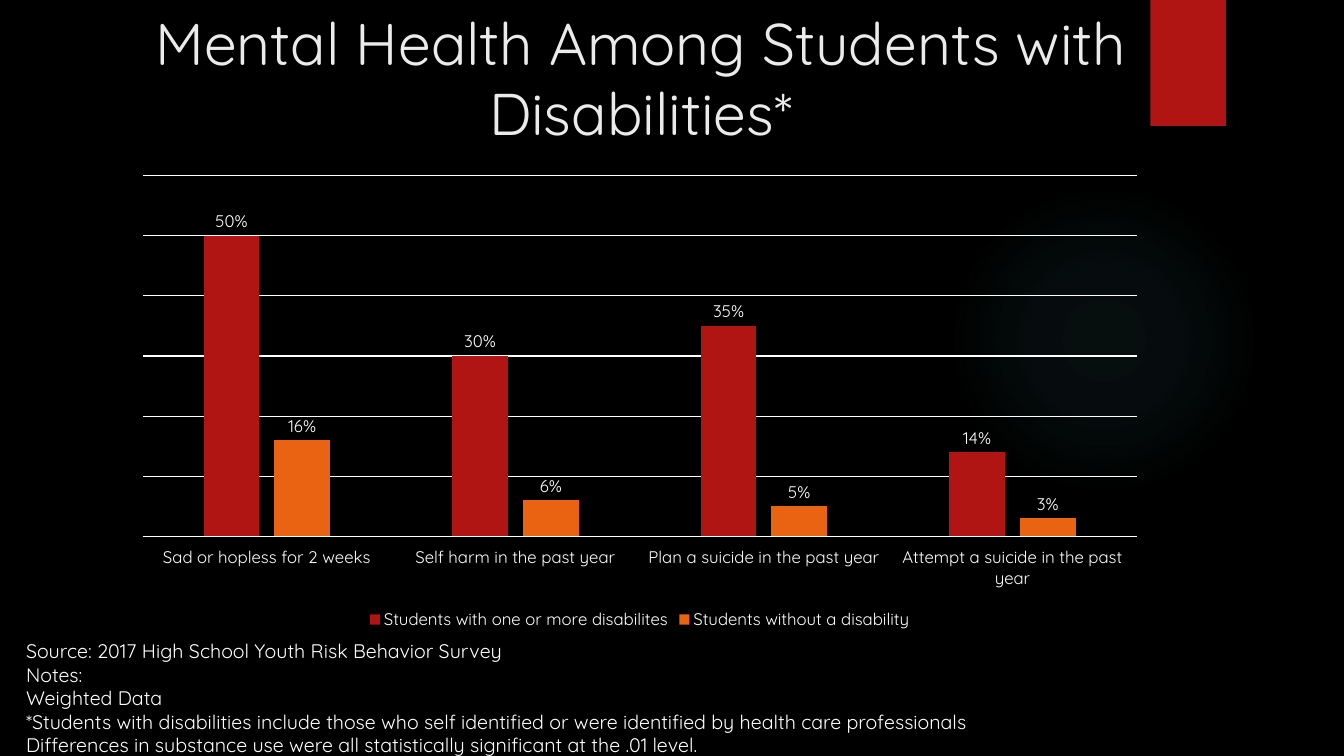
from dataclasses import dataclass

from lxml.etree import SubElement
from pptx import Presentation
from pptx.chart.data import CategoryChartData
from pptx.dml.color import RGBColor
from pptx.enum.chart import XL_CHART_TYPE as ChartType
from pptx.enum.chart import XL_LABEL_POSITION as LabelPosition
from pptx.enum.chart import XL_LEGEND_POSITION as LegendPosition
from pptx.enum.chart import XL_TICK_LABEL_POSITION as TickLabelPosition
from pptx.enum.chart import XL_TICK_MARK as TickMark
from pptx.enum.shapes import MSO_SHAPE as ShapeType
from pptx.enum.text import MSO_ANCHOR as Anchor
from pptx.enum.text import PP_ALIGN as Align
from pptx.oxml.ns import qn
from pptx.shapes.autoshape import Shape
from pptx.slide import Slide
from pptx.text.text import Font
from pptx.util import Inches, Pt

BLACK = RGBColor(0x00, 0x00, 0x00)
WHITE = RGBColor(0xFF, 0xFF, 0xFF)
TITLE_GRAY = RGBColor(0xEB, 0xEB, 0xEB)
RED = RGBColor(0xB0, 0x15, 0x13)
ORANGE = RGBColor(0xEA, 0x63, 0x12)
TEAL = RGBColor(0x50, 0xB9, 0xC1)
FONT_NAME = "Quicksand"


@dataclass(frozen=True)
class Box:
    left: float
    top: float
    width: float
    height: float

    def lengths(self) -> tuple[int, ...]:
        return tuple(map(Inches, (self.left, self.top, self.width, self.height)))


@dataclass(frozen=True)
class TextBlock:
    box: Box
    lines: tuple[str, ...]
    size: float
    color: RGBColor
    align: Align
    anchor: Anchor


@dataclass(frozen=True)
class Group:
    name: str
    shares: tuple[float, ...]
    color: RGBColor


@dataclass(frozen=True)
class GlowStop:
    position: int
    opacity: int


GLOW_BOX = Box(9.41, 1.83, 3.08, 3.08)
TAB_BOX = Box(11.41, 0, 0.75, 1.25)
CHART_BOX = Box(1.21, 1.65, 10.27, 4.64)
GLOW_STOPS = (GlowStop(0, 7), GlowStop(36, 6), GlowStop(69, 0))

TEXT_BLOCKS = (
    TextBlock(
        Box(1.21, 0, 10.29, 1.53),
        ("Mental Health Among Students with Disabilities*",),
        42, TITLE_GRAY, Align.CENTER, Anchor.MIDDLE,
    ),
    TextBlock(
        Box(0.16, 6.29, 13.18, 1.28),
        (
            "Source: 2017 High School Youth Risk Behavior Survey",
            "Notes:",
            "Weighted Data",
            "*Students with disabilities include those who self identified "
            "or were identified by health care professionals",
            "Differences in substance use were all statistically significant "
            "at the .01 level.",
        ),
        14, WHITE, Align.LEFT, Anchor.TOP,
    ),
)

CATEGORIES = (
    "Sad or hopless for 2 weeks",
    "Self harm in the past year",
    "Plan a suicide in the past year",
    "Attempt a suicide in the past year",
)
GROUPS = (
    Group("Students with one or more disabilites", (0.5, 0.3, 0.35, 0.14), RED),
    Group("Students without a disability", (0.16, 0.06, 0.05, 0.03), ORANGE),
)


def style_font(font: Font, size: float, color: RGBColor = WHITE) -> None:
    font.name = FONT_NAME
    font.size = Pt(size)
    font.color.rgb = color


def add_plain_shape(slide: Slide, kind: ShapeType, box: Box) -> Shape:
    shape = slide.shapes.add_shape(kind, *box.lengths())
    shape.shadow.inherit = False
    shape.fill.background()
    shape.line.fill.background()
    return shape


def add_glow(slide: Slide) -> None:
    shape = add_plain_shape(slide, ShapeType.OVAL, GLOW_BOX)
    properties = shape.element.spPr
    empty_fill = properties.find(qn("a:noFill"))
    gradient = SubElement(properties, qn("a:gradFill"), rotWithShape="1")
    properties.replace(empty_fill, gradient)
    stops = SubElement(gradient, qn("a:gsLst"))
    for glow_stop in GLOW_STOPS:
        stop = SubElement(stops, qn("a:gs"), pos=str(glow_stop.position * 1000))
        color = SubElement(stop, qn("a:srgbClr"), val=str(TEAL))
        SubElement(color, qn("a:alpha"), val=str(glow_stop.opacity * 1000))
    circle = SubElement(gradient, qn("a:path"), path="circle")
    center = dict.fromkeys("ltrb", "50000")
    SubElement(circle, qn("a:fillToRect"), center)


def add_tab(slide: Slide) -> None:
    shape = add_plain_shape(slide, ShapeType.RECTANGLE, TAB_BOX)
    shape.fill.solid()
    shape.fill.fore_color.rgb = RED
    effects = shape.element.spPr.find(qn("a:effectLst"))
    shadow = SubElement(
        effects, qn("a:outerShdw"),
        blurRad=str(Pt(3)), dist=str(Pt(2)), dir="5400000", rotWithShape="0",
    )
    color = SubElement(shadow, qn("a:srgbClr"), val=str(BLACK))
    SubElement(color, qn("a:alpha"), val="45000")


def add_text(slide: Slide, block: TextBlock) -> None:
    text_frame = slide.shapes.add_textbox(*block.box.lengths()).text_frame
    text_frame.word_wrap = True
    text_frame.vertical_anchor = block.anchor
    text_frame.text = "\n".join(block.lines)
    for paragraph in text_frame.paragraphs:
        paragraph.alignment = block.align
        for run in paragraph.runs:
            style_font(run.font, block.size, block.color)


def add_survey_chart(slide: Slide) -> None:
    data = CategoryChartData(number_format="0%")
    data.categories = CATEGORIES
    for group in GROUPS:
        data.add_series(group.name, group.shares)
    chart = slide.shapes.add_chart(
        ChartType.COLUMN_CLUSTERED, *CHART_BOX.lengths(), data
    ).chart
    style_font(chart.font, 10)
    chart.has_title = False
    chart.has_legend = True
    chart.legend.position = LegendPosition.BOTTOM
    chart.legend.include_in_layout = False
    style_font(chart.legend.font, 12)

    category_axis = chart.category_axis
    category_axis.major_tick_mark = TickMark.NONE
    category_axis.tick_label_position = TickLabelPosition.LOW
    style_font(category_axis.tick_labels.font, 12)
    value_axis = chart.value_axis
    value_axis.minimum_scale = 0
    value_axis.maximum_scale = 0.6
    value_axis.major_unit = 0.1
    value_axis.has_major_gridlines = True
    value_axis.visible = False
    for line in (category_axis.format.line, value_axis.major_gridlines.format.line):
        line.color.rgb = WHITE
        line.width = Pt(0.75)

    plot = chart.plots[0]
    plot.vary_by_categories = False
    plot.gap_width = 219
    plot.overlap = -27
    for series, group in zip(plot.series, GROUPS):
        series.format.fill.solid()
        series.format.fill.fore_color.rgb = group.color
        labels = series.data_labels
        labels.show_value = True
        labels.position = LabelPosition.OUTSIDE_END
        labels.number_format = "0%"
        labels.number_format_is_linked = False
        style_font(labels.font, 12)


def main() -> None:
    presentation = Presentation()
    presentation.slide_width = Inches(13.33)
    presentation.slide_height = Inches(7.5)
    slide = presentation.slides.add_slide(presentation.slide_layouts[6])
    slide.background.fill.solid()
    slide.background.fill.fore_color.rgb = BLACK
    add_glow(slide)
    add_tab(slide)
    add_survey_chart(slide)
    for block in TEXT_BLOCKS:
        add_text(slide, block)
    presentation.save("out.pptx")


if __name__ == "__main__":
    main()
